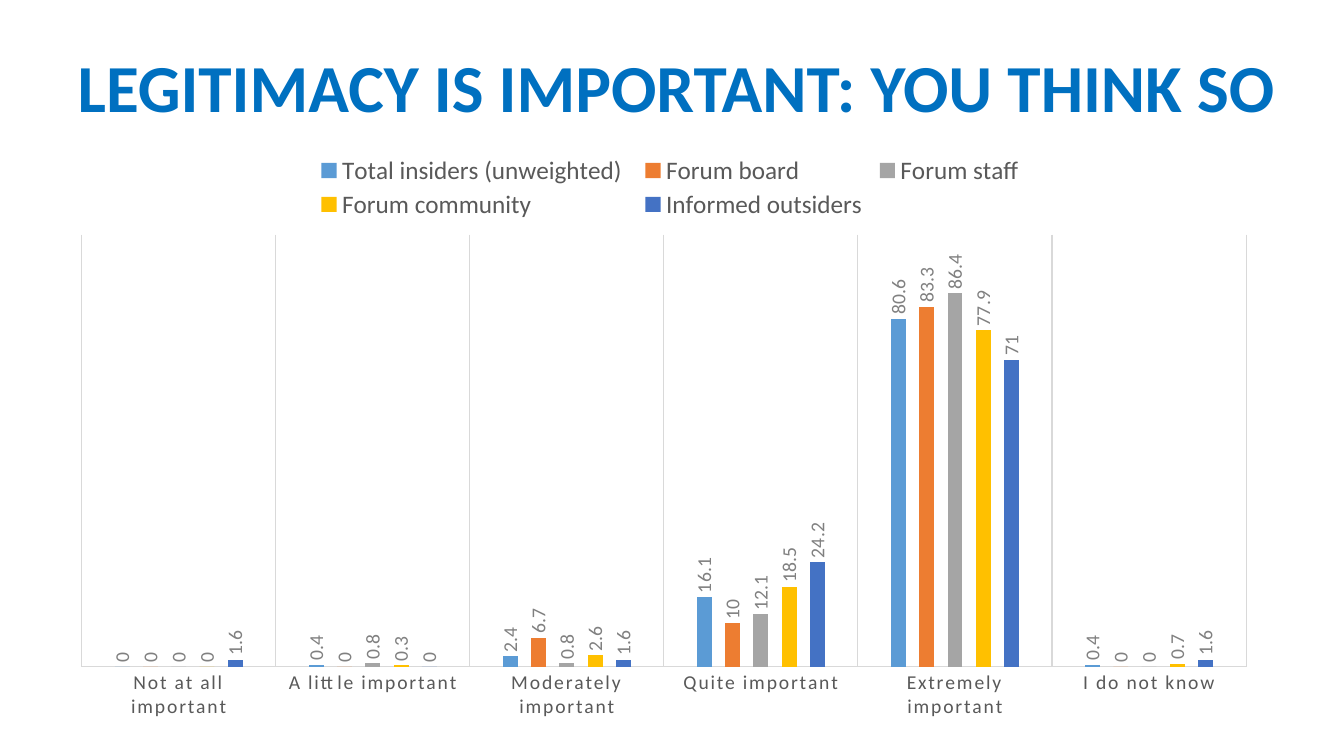
from lxml import etree
from pptx import Presentation
from pptx.chart.data import CategoryChartData
from pptx.dml.color import RGBColor
from pptx.enum.chart import (XL_CHART_TYPE, XL_LABEL_POSITION,
                             XL_LEGEND_POSITION, XL_TICK_MARK)
from pptx.enum.text import MSO_ANCHOR, PP_ALIGN
from pptx.util import Inches, Pt

CLUSTERED = XL_CHART_TYPE.COLUMN_CLUSTERED
OUTSIDE_END = XL_LABEL_POSITION.OUTSIDE_END
LEGEND_TOP = XL_LEGEND_POSITION.TOP
NO_TICK = XL_TICK_MARK.NONE
MIDDLE = MSO_ANCHOR.MIDDLE
CENTER = PP_ALIGN.CENTER
CHART_NS = "http://schemas.openxmlformats.org/drawingml/2006/chart"

CATEGORIES = ["Not at all important", "A little important",
              "Moderately important", "Quite important",
              "Extremely important", "I do not know"]
GROUPS = [
    ("Total insiders (unweighted) ", "5B9BD5", (0, 0.4, 2.4, 16.1, 80.6, 0.4)),
    ("Forum board", "ED7D31", (0, 0, 6.7, 10, 83.3, 0)),
    ("Forum staff", "A5A5A5", (0, 0.8, 0.8, 12.1, 86.4, 0)),
    ("Forum community", "FFC000", (0, 0.3, 2.6, 18.5, 77.9, 0.7)),
    ("Informed outsiders", "4472C4", (1.6, 0, 1.6, 24.2, 71, 1.6)),
]


def set_font(font, size, color, bold=False):
    formats = {"name": "Calibri", "size": Pt(size), "bold": bold}
    for attribute, value in formats.items():
        setattr(font, attribute, value)
    font.color.rgb = RGBColor.from_string(color)


def place_in_chart(element, index, **settings):
    """Fix a chart part's position and size as fractions of the chart."""
    for old in element.findall(f"{{{CHART_NS}}}layout"):
        element.remove(old)
    layout = etree.Element(f"{{{CHART_NS}}}layout")
    manual = etree.SubElement(layout, f"{{{CHART_NS}}}manualLayout")
    for tag, value in settings.items():
        etree.SubElement(manual, f"{{{CHART_NS}}}{tag}", val=str(value))
    element.insert(index, layout)


presentation = Presentation()
presentation.slide_width = Inches(13.33)
presentation.slide_height = Inches(7.5)
slide = presentation.slides.add_slide(presentation.slide_layouts[5])

# Title
title = slide.shapes.title
title.left, title.top = Inches(0.08), Inches(0.18)
title.width, title.height = Inches(13.26), Inches(1.45)
title.text_frame.text = "LEGITIMACY IS IMPORTANT: YOU THINK SO"
title.text_frame.vertical_anchor = MIDDLE
headline = title.text_frame.paragraphs[0]
headline.alignment = CENTER
headline.line_spacing = 0.9
set_font(headline.runs[0].font, 48, "0070C0", bold=True)

# Chart
survey = CategoryChartData()
survey.categories = CATEGORIES
for name, _, shares in GROUPS:
    survey.add_series(name, shares)
chart = slide.shapes.add_chart(CLUSTERED, Inches(0.57), Inches(1.39),
                               Inches(12.03), Inches(5.87), survey).chart
set_font(chart.font, 10, "000000")
chart.has_title = False

columns = chart.plots[0]
columns.gap_width = 444
columns.overlap = -90
columns.vary_by_categories = False
for series, (_, color, _) in zip(columns.series, GROUPS):
    series.format.fill.solid()
    series.format.fill.fore_color.rgb = RGBColor.from_string(color)
    labels = series.data_labels
    labels.show_value = True
    labels.position = OUTSIDE_END
    set_font(labels.font, 14, "808080")
    label_body = labels._element.xpath("c:txPr/a:bodyPr")[0]
    label_body.set("rot", "-5400000")
    label_body.set("vert", "horz")

# Axes
answers = chart.category_axis
answers.major_tick_mark = NO_TICK
answers.minor_tick_mark = NO_TICK
answers.has_major_gridlines = True
for line in (answers.format.line, answers.major_gridlines.format.line):
    line.color.rgb = RGBColor.from_string("D9D9D9")
    line.width = Pt(0.75)
set_font(answers.tick_labels.font, 14, "595959")
answers._element.xpath("c:txPr//a:defRPr")[0].set("spc", "120")

percent = chart.value_axis
percent.minimum_scale = 0
percent.maximum_scale = 100
percent.has_major_gridlines = False
percent.visible = False

# Legend and plot area
chart.has_legend = True
legend = chart.legend
legend.position = LEGEND_TOP
legend.include_in_layout = False
set_font(legend.font, 18, "595959")
place_in_chart(legend._element, 1, xMode="edge", yMode="edge",
               x=0.21, y=0.02, w=0.59, h=0.12)
plot_area = chart._chartSpace.xpath("c:chart/c:plotArea")[0]
place_in_chart(plot_area, 0, layoutTarget="inner", xMode="edge", yMode="edge",
               x=0.02, y=0.16, w=0.96, h=0.73)

presentation.save("out.pptx")
